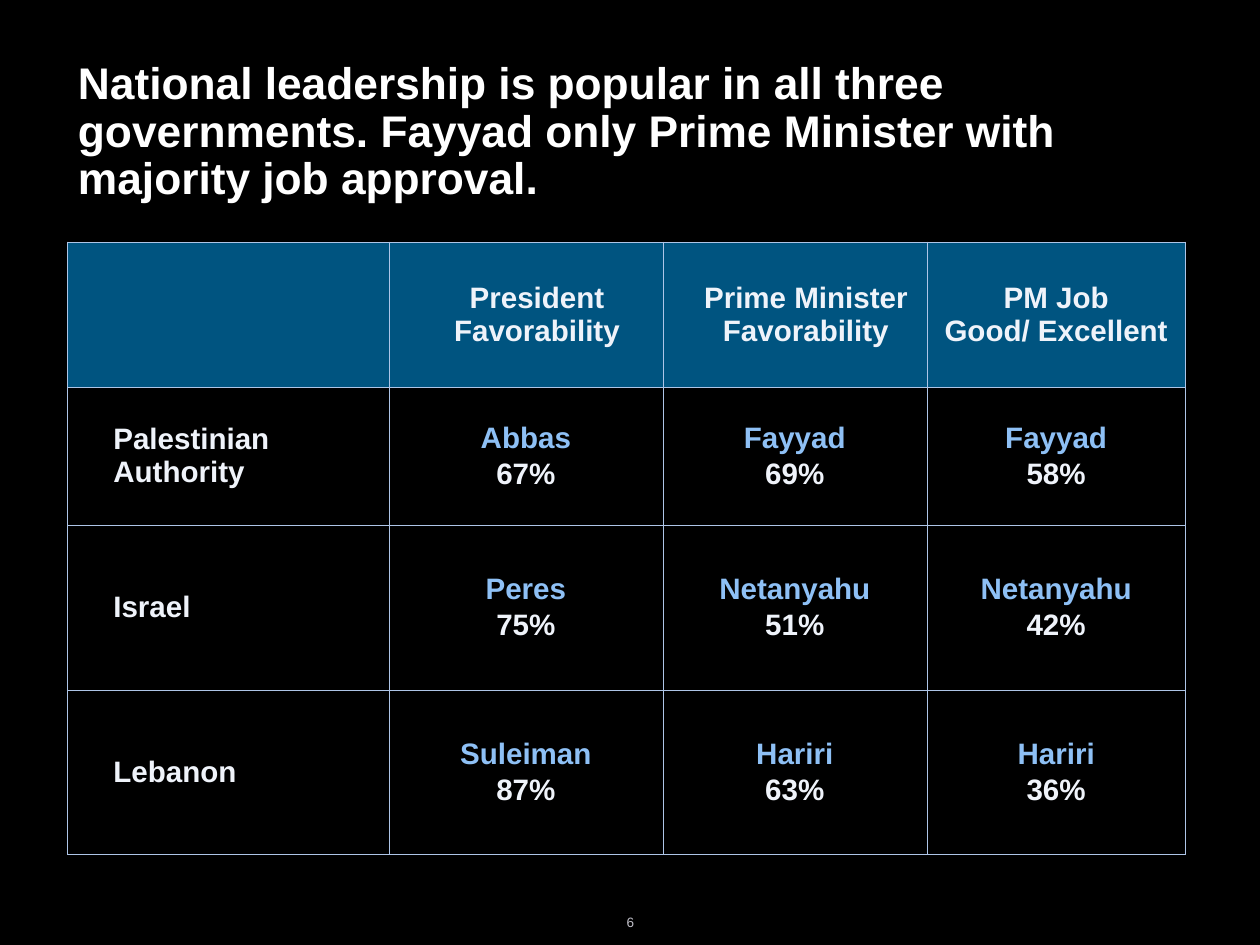
import pptx
import pptx.dml.color
import pptx.enum.text
import pptx.oxml
import pptx.oxml.ns
import pptx.util

TITLE = ("National leadership is popular in all three governments. "
         "Fayyad only Prime Minister with majority job approval.")
PAGE_NUMBER = "6"
HEADERS = ["", "President Favorability", "Prime Minister\vFavorability", "PM Job\vGood/ Excellent"]
LEADERS = [
    ("Palestinian\vAuthority", [("Abbas", "67%"), ("Fayyad", "69%"), ("Fayyad", "58%")]),
    ("Israel", [("Peres", "75%"), ("Netanyahu", "51%"), ("Netanyahu", "42%")]),
    ("Lebanon", [("Suleiman", "87%"), ("Hariri", "63%"), ("Hariri", "36%")]),
]
COLUMN_WIDTHS = [3.63, 3.09, 2.98, 2.92]
ROW_HEIGHTS = [1.64, 1.56, 1.86, 1.86]
HEADER_INDENTS = [0, 0.25, 0.25, 0]
LABEL_INDENT = 0.38
BLACK, WHITE, PALE, SKY = "000000", "FFFFFF", "EFF3FA", "8EC0F5"
HEADER_FILL, BORDER, GREY = "005480", "AEC5E7", "BFBEC7"

INCH = pptx.util.Inches
ALIGN = pptx.enum.text.PP_ALIGN
MIDDLE = pptx.enum.text.MSO_ANCHOR.MIDDLE
CELL_FORMAT = {"margin_left": INCH(0.14), "margin_right": INCH(0.14),
               "margin_top": INCH(0.07), "margin_bottom": INCH(0.07),
               "vertical_anchor": MIDDLE}


def colour(value):
    return pptx.dml.color.RGBColor.from_string(value)


def apply(target, values):
    for name, value in values.items():
        setattr(target, name, value)


def write(para, text, size, shade, bold=True, indent=0, **layout):
    para.text = text
    if indent:
        properties = para._p.get_or_add_pPr()
        properties.set("marL", str(INCH(indent)))
        properties.set("indent", "0")
    apply(para, layout)
    for span in para.runs:
        apply(span.font, {"name": "Arial", "size": pptx.util.Pt(size), "bold": bold})
        span.font.color.rgb = colour(shade)


def draw_borders(cell):
    properties = cell._tc.get_or_add_tcPr()
    for position, side in enumerate(["lnL", "lnR", "lnT", "lnB"]):
        properties.insert(position, pptx.oxml.parse_xml(
            f'<a:{side} {pptx.oxml.ns.nsdecls("a")} w="3175"><a:solidFill>'
            f'<a:srgbClr val="{BORDER}"/></a:solidFill></a:{side}>'))


def fill_cell(cell, lines, shade=None, indent=0, align=ALIGN.CENTER):
    apply(cell, CELL_FORMAT)
    if shade:
        cell.fill.solid()
        cell.fill.fore_color.rgb = colour(shade)
    else:
        cell.fill.background()
    draw_borders(cell)
    frame = cell.text_frame
    for number, (text, text_colour) in enumerate(lines):
        para = frame.add_paragraph() if number else frame.paragraphs[0]
        write(para, text, 24, text_colour, indent=indent, alignment=align,
              space_after=pptx.util.Pt(2.4))


def add_title(page):
    title = page.shapes.title
    apply(title, {"left": INCH(0.78), "top": INCH(0.61),
                  "width": INCH(12.94), "height": INCH(1.78)})
    apply(title.text_frame, {"word_wrap": True, "vertical_anchor": MIDDLE,
                             "auto_size": pptx.enum.text.MSO_AUTO_SIZE.NONE})
    write(title.text_frame.paragraphs[0], TITLE, 36, WHITE,
          alignment=ALIGN.LEFT, line_spacing=0.9)


def add_leader_table(page):
    table = page.shapes.add_table(
        len(ROW_HEIGHTS), len(COLUMN_WIDTHS), INCH(0.76), INCH(2.73),
        INCH(sum(COLUMN_WIDTHS)), INCH(sum(ROW_HEIGHTS))).table
    apply(table, {"first_row": False, "horz_banding": False})
    for column, width in zip(table.columns, COLUMN_WIDTHS):
        column.width = INCH(width)
    for row, height in zip(table.rows, ROW_HEIGHTS):
        row.height = INCH(height)
    for column, (text, indent) in enumerate(zip(HEADERS, HEADER_INDENTS)):
        fill_cell(table.cell(0, column), [(text, PALE)], HEADER_FILL, indent)
    for row, (government, ratings) in enumerate(LEADERS, 1):
        fill_cell(table.cell(row, 0), [(government, PALE)],
                  indent=LABEL_INDENT, align=ALIGN.LEFT)
        for column, (leader, share) in enumerate(ratings, 1):
            fill_cell(table.cell(row, column), [(leader, SKY), (share, PALE)])


def add_page_number(page):
    box = page.shapes.add_textbox(INCH(6.92), INCH(10.27), INCH(0.39), INCH(0.29))
    box.text_frame.word_wrap = False
    write(box.text_frame.paragraphs[0], PAGE_NUMBER, 11, GREY, bold=False,
          alignment=ALIGN.CENTER)


def main():
    deck = pptx.Presentation()
    apply(deck, {"slide_width": INCH(14.22), "slide_height": INCH(10.67)})
    page = deck.slides.add_slide(deck.slide_layouts[5])
    page.background.fill.solid()
    page.background.fill.fore_color.rgb = colour(BLACK)
    add_title(page)
    add_leader_table(page)
    add_page_number(page)
    deck.save("out.pptx")


if __name__ == "__main__":
    main()
